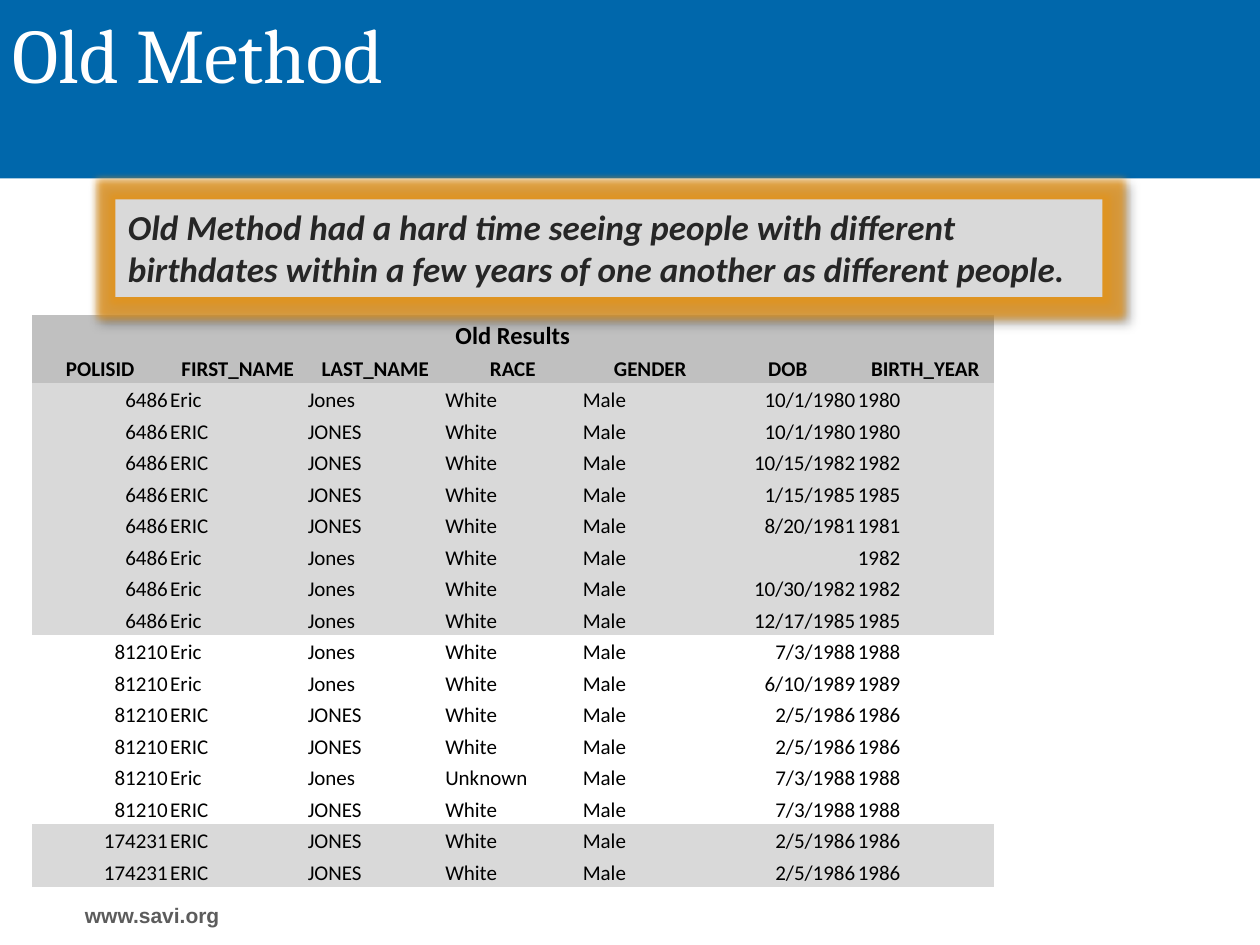
from lxml import etree
from pptx import Presentation
from pptx.dml.color import RGBColor
from pptx.enum.shapes import MSO_SHAPE
from pptx.enum.text import MSO_ANCHOR, PP_ALIGN
from pptx.oxml.ns import qn
from pptx.util import Pt

RECT = MSO_SHAPE.RECTANGLE
TOP, MIDDLE = MSO_ANCHOR.TOP, MSO_ANCHOR.MIDDLE
LEFT, CENTER, RIGHT = PP_ALIGN.LEFT, PP_ALIGN.CENTER, PP_ALIGN.RIGHT

BLUE = RGBColor(0x00, 0x67, 0xAB)
WHITE = RGBColor(0xFF, 0xFF, 0xFF)
BLACK = RGBColor(0x00, 0x00, 0x00)
SILVER = RGBColor(0xC0, 0xC0, 0xC0)
LIGHT = RGBColor(0xD9, 0xD9, 0xD9)
DARK = RGBColor(0x26, 0x26, 0x26)
GRAY = RGBColor(0x5C, 0x5C, 0x5C)
ORANGE = RGBColor(0xE2, 0x94, 0x1E)

NO_STYLE = "{2D5ABB26-0587-4C30-8999-92F81FD0307C}"
HEADERS = ["POLISID", "FIRST_NAME", "LAST_NAME", "RACE", "GENDER", "DOB", "BIRTH_YEAR"]
ALIGNS = [RIGHT, LEFT, LEFT, LEFT, LEFT, RIGHT, LEFT]
# One group per person ID: fill, then first name, last name, race, DOB, birth year
GROUPS = [
    ("6486", LIGHT, [
        ("Eric", "Jones", "White", "10/1/1980", "1980"),
        ("ERIC", "JONES", "White", "10/1/1980", "1980"),
        ("ERIC", "JONES", "White", "10/15/1982", "1982"),
        ("ERIC", "JONES", "White", "1/15/1985", "1985"),
        ("ERIC", "JONES", "White", "8/20/1981", "1981"),
        ("Eric", "Jones", "White", "", "1982"),
        ("Eric", "Jones", "White", "10/30/1982", "1982"),
        ("Eric", "Jones", "White", "12/17/1985", "1985"),
    ]),
    ("81210", WHITE, [
        ("Eric", "Jones", "White", "7/3/1988", "1988"),
        ("Eric", "Jones", "White", "6/10/1989", "1989"),
        ("ERIC", "JONES", "White", "2/5/1986", "1986"),
        ("ERIC", "JONES", "White", "2/5/1986", "1986"),
        ("Eric", "Jones", "Unknown", "7/3/1988", "1988"),
        ("ERIC", "JONES", "White", "7/3/1988", "1988"),
    ]),
    ("174231", LIGHT, [
        ("ERIC", "JONES", "White", "2/5/1986", "1986"),
        ("ERIC", "JONES", "White", "2/5/1986", "1986"),
    ]),
]


def write(tf, text, color, align=LEFT, **fmt):
    p = tf.paragraphs[0]
    p.alignment = align
    r = p.add_run()
    r.text = text
    r.font.color.rgb = color
    for name, value in fmt.items():
        setattr(r.font, name, value)
    return p


def fill_cell(cell, text, fill, align, anchor=TOP, size=12, bold=False):
    cell.fill.solid()
    cell.fill.fore_color.rgb = fill
    cell.vertical_anchor = anchor
    cell.margin_left = cell.margin_right = cell.margin_top = cell.margin_bottom = Pt(0.72)
    if text:
        p = write(cell.text_frame, text, BLACK, align, name="Calibri", size=Pt(size), bold=bold)
        p.line_spacing = 1.15
    else:
        # Keep an empty cell from stretching its row
        p = cell.text_frame.paragraphs[0]
        etree.SubElement(p._p, qn("a:endParaRPr"), sz=str(size * 100))


prs = Presentation()
prs.slide_width, prs.slide_height = Pt(720), Pt(540)
s = prs.slides.add_slide(prs.slide_layouts[6])

# Title band
band = s.shapes.add_shape(RECT, Pt(0), Pt(0), Pt(720), Pt(102))
band.shadow.inherit = False
band.fill.solid()
band.fill.fore_color.rgb = BLUE
band.line.fill.background()

# Footer and title
for box, text, color, align, fmt in [
    ((12, 512, 150, 21.6), "www.savi.org", GRAY, CENTER,
     {"name": "Arial", "size": Pt(12), "bold": True}),
    ((0, 0, 696, 102), "Old Method", WHITE, LEFT, {"name": "Cambria", "size": Pt(44)}),
]:
    sp = s.shapes.add_textbox(*map(Pt, box))
    sp.text_frame.word_wrap = True
    write(sp.text_frame, text, color, align, **fmt)

# Results table
rows = [((pid, first, last, race, "Male", dob, year), fill)
        for pid, fill, people in GROUPS for first, last, race, dob, year in people]
table = s.shapes.add_table(len(rows) + 2, len(HEADERS), Pt(18), Pt(180), Pt(550), Pt(324)).table
table.first_row = table.horz_banding = False
table._tbl.tblPr.find(qn("a:tableStyleId")).text = NO_STYLE
for col in table.columns:
    col.width = Pt(78.58)
for row in table.rows:
    row.height = Pt(15.84)
table.rows[0].height = Pt(16.56)

table.cell(0, 0).merge(table.cell(0, len(HEADERS) - 1))
fill_cell(table.cell(0, 0), "Old Results", SILVER, CENTER, MIDDLE, 14, True)
for j, header in enumerate(HEADERS):
    fill_cell(table.cell(1, j), header, SILVER, CENTER, MIDDLE, bold=True)
for i, (values, fill) in enumerate(rows, 2):
    for j, value in enumerate(values):
        fill_cell(table.cell(i, j), value, fill, ALIGNS[j])

# Callout with a glow and a soft shadow
sp = s.shapes.add_shape(RECT, Pt(66), Pt(114), Pt(564), Pt(55.74))
sp.shadow.inherit = False
sp.fill.solid()
sp.fill.fore_color.rgb = LIGHT
sp.line.fill.background()
effects = sp._element.spPr.find(qn("a:effectLst"))
for tag, attrs, color, alpha in [
    ("a:glow", {"rad": Pt(8)}, ORANGE, 80),
    ("a:outerShdw", {"blurRad": Pt(4), "dist": Pt(3), "dir": 45 * 60000}, BLACK, 40),
]:
    effect = etree.SubElement(effects, qn(tag), {k: str(int(v)) for k, v in attrs.items()})
    clr = etree.SubElement(effect, qn("a:srgbClr"), val=str(color))
    etree.SubElement(clr, qn("a:alpha"), val=str(alpha * 1000))
tf = sp.text_frame
tf.word_wrap = True
tf.vertical_anchor = TOP
write(tf, "Old Method had a hard time seeing people with different birthdates "
      "within a few years of one another as different people.",
      DARK, name="Calibri", size=Pt(20), bold=True, italic=True)

prs.save("out.pptx")
